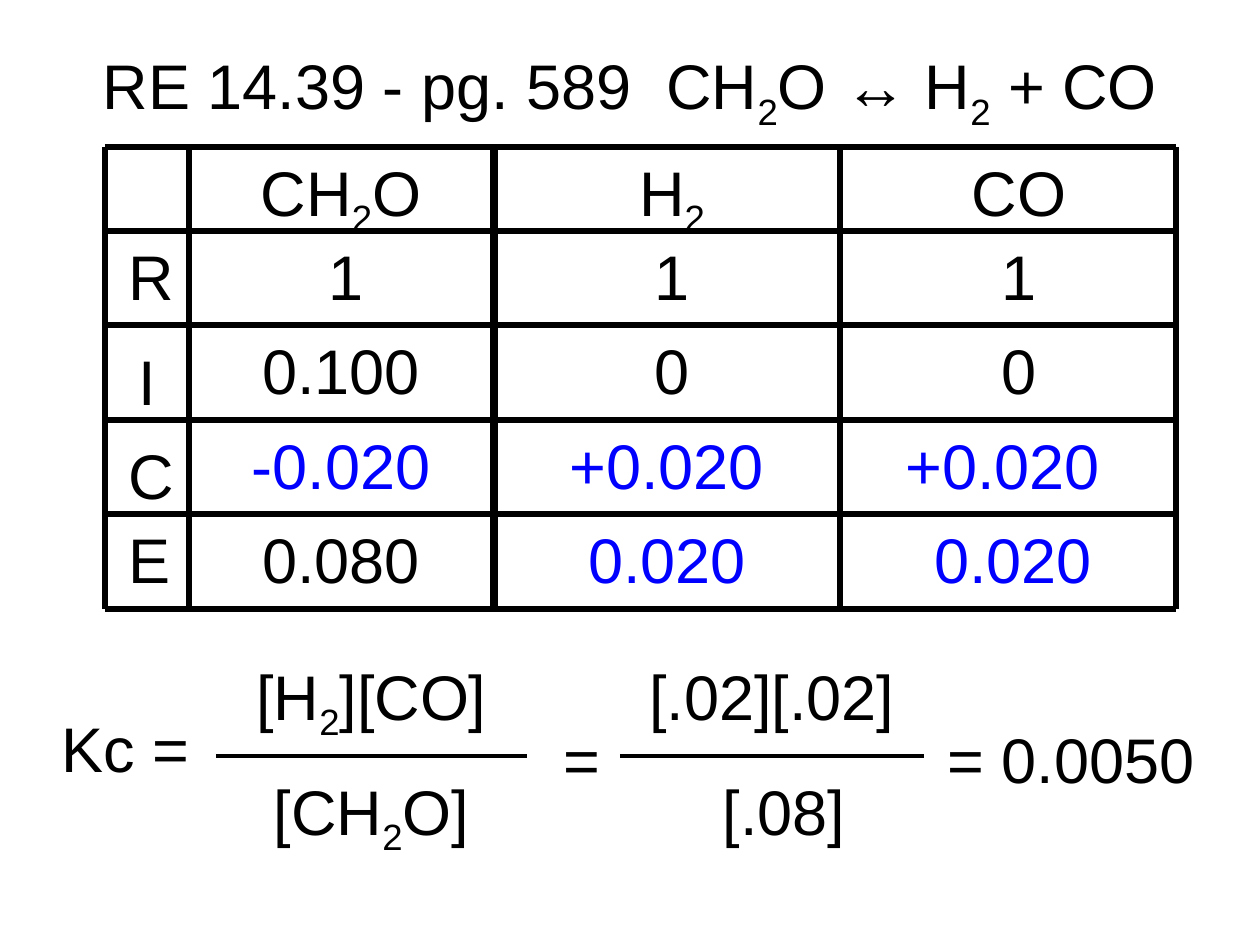
from lxml.etree import SubElement as Sub
from pptx import Presentation as Deck
from pptx.dml.color import RGBColor as Rgb
from pptx.enum.shapes import MSO_CONNECTOR as Conn
from pptx.enum.text import MSO_ANCHOR as Anchor, MSO_AUTO_SIZE as Auto, PP_ALIGN as Align
from pptx.oxml.ns import qn
from pptx.util import Pt

SCALE = 914400 / 126
COLORS = {"ink": "000000", "blue": "0000FF"}
FONT = {"name": "Arial", "size": Pt(36)}
BOX = {"word_wrap": True, "auto_size": Auto.SHAPE_TO_FIT_TEXT}
TITLE = {"word_wrap": True, "auto_size": Auto.NONE, "vertical_anchor": Anchor.MIDDLE}
HIGH = 88


def emu(*px):
    return [round(n * SCALE) for n in px]


def put(obj, style):
    for key, val in style.items():
        setattr(obj, key, val)


class Page:
    def __init__(self, wide, high):
        self.deck = Deck()
        put(self.deck, dict(zip(("slide_width", "slide_height"), emu(wide, high))))
        self.slide = self.deck.slides.add_slide(self.deck.slide_layouts[6])

    def text(self, text, x, y, w, h=HIGH, color="ink", align=Align.CENTER,
             frame=BOX, lead=True):
        """Write text; the parts between underscores are subscripts."""
        box = self.slide.shapes.add_textbox(*emu(x, y, w, h)).text_frame
        put(box, frame)
        para = box.paragraphs[0]
        para.alignment = align
        if lead:
            gap = Sub(para._p.get_or_add_pPr(), qn("a:spcBef"))
            Sub(gap, qn("a:spcPct")).set("val", "50000")
        for i, part in enumerate(text.split("_")):
            if part:
                run = para.add_run()
                run.text = part
                put(run.font, FONT)
                run.font.color.rgb = Rgb.from_string(COLORS[color])
                if i % 2:
                    run.font._element.set("baseline", "-25000")

    def line(self, x1, y1, x2, y2, width=3):
        rule = self.slide.shapes.add_connector(Conn.STRAIGHT, *emu(x1, y1, x2, y2))
        rule.line.width = Pt(width)
        rule.line.color.rgb = Rgb.from_string(COLORS["ink"])
        Sub(rule._element.spPr, qn("a:effectLst"))


def main():
    page = Page(1260, 945)

    # Title
    page.text("RE 14.39 - pg. 589  CH_2_O ↔ H_2_ + CO", 63, 53, 1134, 73,
              frame=TITLE, lead=False)

    # Grid rules
    cols = [105, 189, 494, 840, 1176]
    rows = [147, 231, 325, 420, 514, 609]
    for x in cols:
        page.line(x, rows[0], x, rows[-1], 4.5 if x == 494 else 3)
    for y in rows:
        page.line(cols[0], y, cols[-1], y)

    # Grid values: text, left, width, color
    slim, wide = 168, 242
    cells = [
        [("CH_2_O", 220, wide, "ink"), ("H_2_", 588, slim, "ink"), ("CO", 935, slim, "ink")],
        [("1", 262, slim, "ink"), ("1", 588, slim, "ink"), ("1", 935, slim, "ink")],
        [("0.100", 220, wide, "ink"), ("0", 588, slim, "ink"), ("0", 935, slim, "ink")],
        [("-0.020", 220, wide, "blue"), ("+0.020", 546, wide, "blue"),
         ("+0.020", 882, wide, "blue")],
        [("0.080", 220, wide, "ink"), ("0.020", 546, wide, "blue"),
         ("0.020", 892, wide, "blue")],
    ]
    for y, row in zip(rows, cells):
        for text, x, w, color in row:
            page.text(text, x, y, w, color=color)

    # Row labels
    for label, y in zip("RICE", (231, 336, 430, 514)):
        page.text(label, 116, y, 63)

    # Fractions: top, bottom, bar left and right, bottom left and width
    for top, low, x1, x2, x, w in (
        ("[H_2_][CO]", "[CH_2_O]", 216, 527, 239, 265),
        ("[.02][.02]", "[.08]", 620, 924, 654, 260),
    ):
        page.text(top, x1, 651, x2 - x1)
        page.line(x1, 756, x2, 756, 2.75)
        page.text(low, x, 766, w)

    # Sides of the equation
    for text, x, y, w in ((" Kc =", 32, 703, 184), ("=", 551, 714, 69),
                          ("= 0.0050", 935, 714, 273)):
        page.text(text, x, y, w, align=Align.LEFT)

    page.deck.save("out.pptx")


if __name__ == "__main__":
    main()
